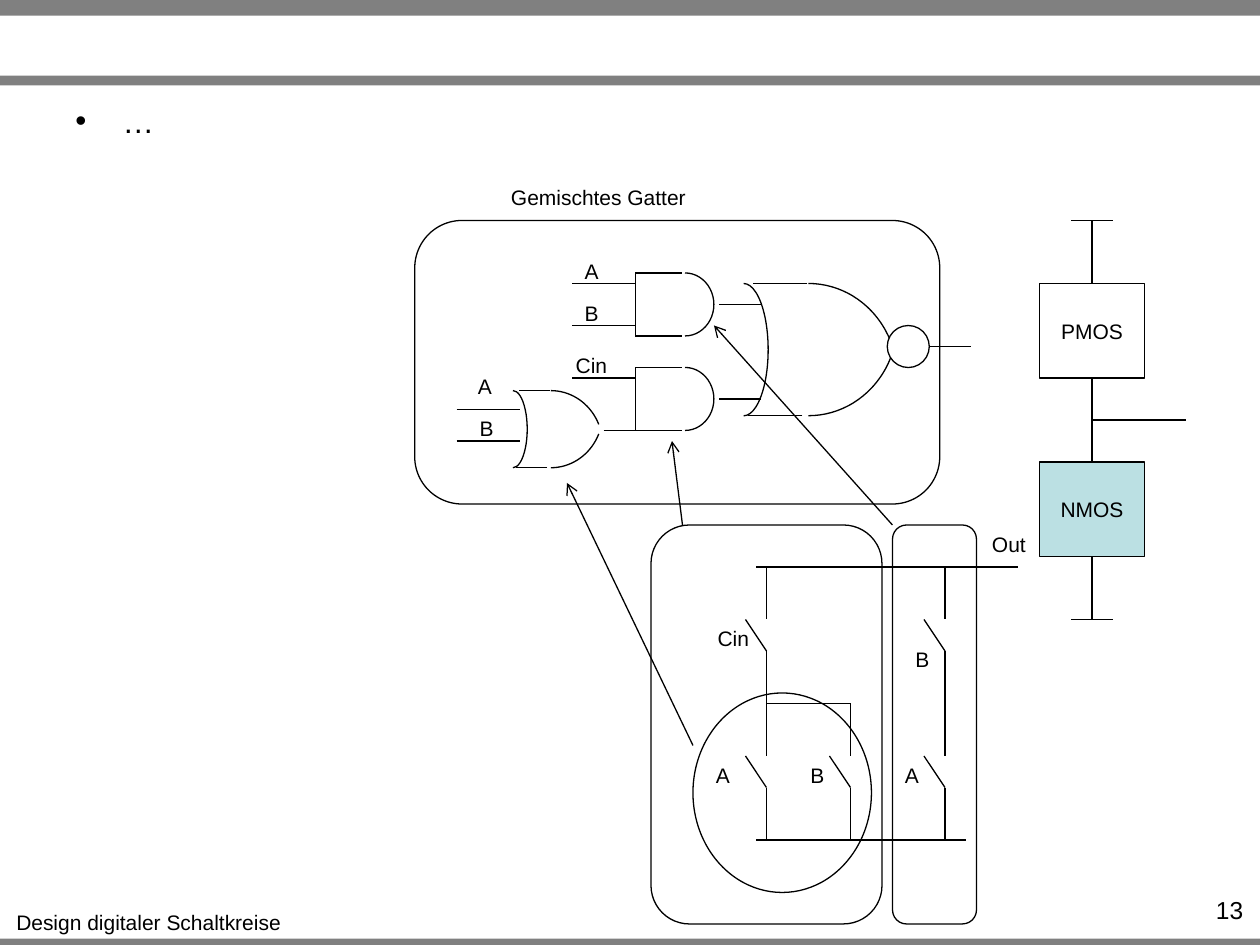
import pptx
import pptx.util
import pptx.dml.color
import pptx.enum.shapes
import pptx.enum.text
from lxml import etree
from pptx.oxml.ns import qn

Pt = pptx.util.Pt
SHAPE = pptx.enum.shapes.MSO_SHAPE
ALIGN = pptx.enum.text.PP_ALIGN
COLORS = {"ink": "000000", "bar": "808080", "paper": "FFFFFF", "nmos": "BBE0E3"}
FONT = "Arial"
TURN = 216  # a full circle in arc adjustment units


def color(name):
    return pptx.dml.color.RGBColor.from_string(COLORS[name])


# Basic parts
def add_outline(page, kind, left, top, width, height, fill=None, line="ink"):
    shape = page.shapes.add_shape(kind, Pt(left), Pt(top), Pt(width), Pt(height))
    shape.shadow.inherit = False
    if fill:
        shape.fill.solid()
        shape.fill.fore_color.rgb = color(fill)
    else:
        shape.fill.background()
    if line:
        shape.line.color.rgb = color(line)
        shape.line.width = Pt(0.75)
    else:
        shape.line.fill.background()
    return shape


def add_arc(page, left, top, width, height, end, flip=False):
    """Arc clockwise from twelve o'clock to the end angle in degrees."""
    arc = add_outline(page, SHAPE.ARC, left, top, width, height)
    arc.adjustments[0] = 270 / 360 * TURN
    arc.adjustments[1] = end / 360 * TURN
    if flip:
        arc.element.spPr.find(qn("a:xfrm")).set("flipV", "1")


def add_wire(page, x1, y1, x2, y2, arrow=False):
    wire = page.shapes.add_connector(
        pptx.enum.shapes.MSO_CONNECTOR.STRAIGHT, Pt(x1), Pt(y1), Pt(x2), Pt(y2))
    wire.line.color.rgb = color("ink")
    wire.line.width = Pt(0.75)
    if arrow:
        line = wire.element.spPr.find(qn("a:ln"))
        etree.SubElement(line, qn("a:tailEnd"), type="arrow")
    etree.SubElement(wire.element.spPr, qn("a:effectLst"))
    return wire


def write(paragraph, text, size=12, align=ALIGN.CENTER):
    paragraph.alignment = align
    span = paragraph.add_run()
    span.text = text
    span.font.name = FONT
    span.font.size = Pt(size)
    span.font.color.rgb = color("ink")


def add_text(page, left, top, width, height):
    box = page.shapes.add_textbox(Pt(left), Pt(top), Pt(width), Pt(height))
    box.text_frame.word_wrap = True
    return box.text_frame


def add_label(page, text, center, top, width=22):
    frame = add_text(page, center - width / 2, top, width, 21.6)
    frame.word_wrap = False
    frame.auto_size = pptx.enum.text.MSO_AUTO_SIZE.SHAPE_TO_FIT_TEXT
    write(frame.paragraphs[0], text)


# Circuit symbols
def add_and_gate(page, left, top):
    height = 36
    for y in (top, top + height):
        add_wire(page, left, y, left + 27, y)
    add_arc(page, left + 12, top, 33, height, 90)
    add_wire(page, left, top, left, top + height)


def add_or_gate(page, left, top, scale=1):
    width, curve, height = 102 * scale, 108 * scale, 75.6 * scale
    bottom = top + height
    add_arc(page, left, top, 28 * scale, height, 90)
    add_arc(page, left, top, width, curve, 336)
    add_arc(page, left, bottom - curve, width, curve, 336, flip=True)
    add_wire(page, left + 50.4 * scale, top, left + 19.4 * scale, top)
    add_wire(page, left + 47.5 * scale, bottom, left + 16.6 * scale, bottom)


def add_switch(page, x, top):
    add_wire(page, x, top, x, top + 30)
    add_wire(page, x, top + 48, x - 12, top + 30)
    add_wire(page, x, top + 48, x, top + 78)


# Regions
def add_frame(page, width):
    for top, height in ((536.4, 6), (0, 9), (43.2, 5.6)):
        add_outline(page, SHAPE.RECTANGLE, 0, top, width, height, "bar", None)
    add_label(page, "Design digitaler Schaltkreise", 85, 516, 167)
    write(add_text(page, 654.5, 508, 63, 18).paragraphs[0], "13", 14, ALIGN.RIGHT)


def add_bullet(page, left, top, width, height):
    paragraph = add_text(page, left, top, width, height).paragraphs[0]
    properties = paragraph._p.get_or_add_pPr()
    properties.set("marL", str(Pt(27)))
    properties.set("indent", str(-Pt(27)))
    etree.SubElement(properties, qn("a:buFont"), typeface=FONT)
    etree.SubElement(properties, qn("a:buChar"), char="•")
    write(paragraph, "…", 18, ALIGN.LEFT)


def add_mixed_gate(page, left, top, width, height):
    add_and_gate(page, left + 126, top + 30)
    add_and_gate(page, left + 126, top + 84)
    add_or_gate(page, left + 174, top + 36)
    add_or_gate(page, left + 48, top + 97.2, 7 / 12)
    # Inputs, links between gates and output
    wires = ((90, 36, 36), (90, 60, 36), (90, 90, 36), (24, 108, 36), (24, 126, 36),
             (174, 48, 24), (174, 102, 24), (108, 120, 18), (294, 72, 24))
    for x, y, length in wires:
        add_wire(page, left + x, top + y, left + x + length, top + y)
    add_outline(page, SHAPE.OVAL, left + 270, top + 60, 24, 24, "paper")
    labels = (("A", 101, 18, 22), ("B", 101, 42, 22), ("Cin", 101, 72, 34),
              ("A", 40, 84, 22), ("B", 41, 108, 22),
              ("Gemischtes Gatter", 105, -24, 115))
    for text, x, y, label_width in labels:
        add_label(page, text, left + x, top + y, label_width)
    add_outline(page, SHAPE.ROUNDED_RECTANGLE, left, top, width, height)


def add_switch_network(page, left, top, height):
    for x, y in ((66, 102), (114, 102), (66, 24), (168, 102), (168, 24)):
        add_switch(page, left + x, top + y)
    for x1, x2, y in ((60, 180, 180), (66, 114, 102), (60, 210, 24)):
        add_wire(page, left + x1, top + y, left + x2, top + y)
    labels = (("A", 41, 132, 22), ("B", 95, 132, 22), ("Cin", 47, 54, 34),
              ("A", 149, 132, 22), ("B", 155, 66, 22), ("Out", 204.5, 0, 35))
    for text, x, y, label_width in labels:
        add_label(page, text, left + x, top + y, label_width)
    # Groups of switches that stand for one gate each
    add_outline(page, SHAPE.OVAL, left + 24, top + 96, 102, 114)
    for x, width in ((0, 132), (138, 48)):
        add_outline(page, SHAPE.ROUNDED_RECTANGLE, left + x, top, width, height)
    for x1, y1, x2, y2 in ((24, 126, -48, -24), (18, 0, 12, -48), (138, 0, 36, -114)):
        add_wire(page, left + x1, top + y1, left + x2, top + y2, arrow=True)


def add_cmos_stage(page, left, top, width, height):
    center, bottom = left + width / 2, top + height
    blocks = []
    for text, y, fill in (("PMOS", top + 36, None), ("NMOS", bottom - 90, "nmos")):
        block = add_outline(page, SHAPE.RECTANGLE, left, y, width, 54, fill)
        block.text_frame.vertical_anchor = pptx.enum.text.MSO_ANCHOR.MIDDLE
        write(block.text_frame.paragraphs[0], text)
        blocks.append(block)
    pmos, nmos = blocks
    add_wire(page, center, top, center, top + 36).end_connect(pmos, 0)
    link = add_wire(page, center, top + 90, center, bottom - 90)
    link.begin_connect(pmos, 2)
    link.end_connect(nmos, 0)
    add_wire(page, center, bottom - 36, center, bottom).begin_connect(nmos, 2)
    # Supply rails and output
    for y in (top, bottom):
        add_wire(page, center - 12, y, center + 12, y)
    middle = top + height / 2
    add_wire(page, center, middle, center + 54, middle)


def main():
    deck = pptx.Presentation()
    deck.slide_width, deck.slide_height = Pt(720), Pt(540)
    page = deck.slides.add_slide(deck.slide_layouts[6])
    add_frame(page, 720)
    add_bullet(page, 36, 54.7, 648, 53.3)
    add_mixed_gate(page, 237, 126, 300, 162)
    add_cmos_stage(page, 594, 126, 60, 228)
    add_switch_network(page, 372, 300, 228)
    deck.save("out.pptx")


if __name__ == "__main__":
    main()
